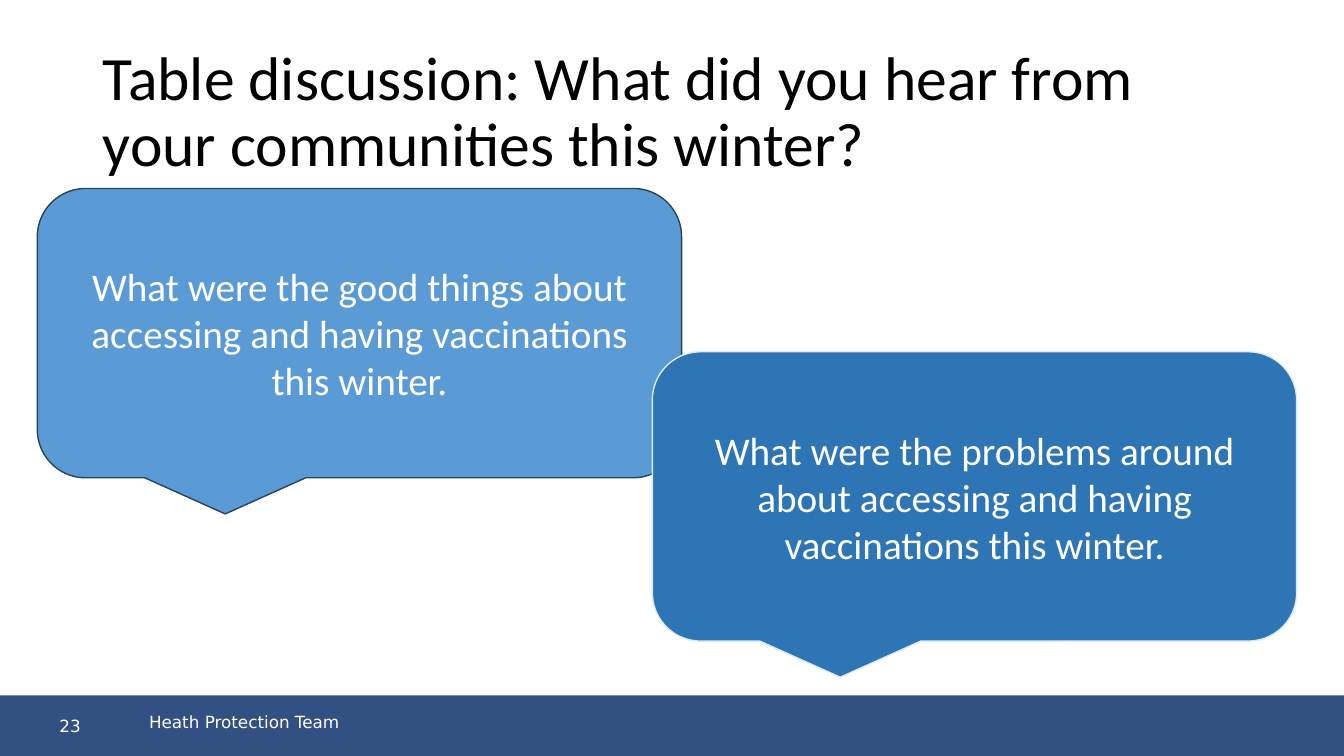
"""Build the table discussion slide."""
from pptx import Presentation
from pptx import util as u
from pptx.dml.color import RGBColor
from pptx.enum import shapes, text

PX = 9144
BLACK = RGBColor(0x00, 0x00, 0x00)
WHITE = RGBColor(0xFF, 0xFF, 0xFF)
SKY = RGBColor(0x5B, 0x9B, 0xD5)
DEEP = RGBColor(0x28, 0x44, 0x5D)
BLUE = RGBColor(0x2E, 0x75, 0xB6)
PALE = RGBColor(0xDE, 0xEB, 0xF7)
NAVY = RGBColor(0x33, 0x50, 0x83)

HEAD = {"name": "Calibri", "size": u.Pt(44)}
TALK = {"name": "Calibri", "size": u.Pt(28)}
NOTE = {"name": "DejaVu Sans", "size": u.Pt(12)}
LEFT, MID = text.PP_ALIGN.LEFT, text.PP_ALIGN.CENTER
TOP, CORE = text.MSO_ANCHOR.TOP, text.MSO_ANCHOR.MIDDLE


def scale(box):
    """Turn a box in px into EMU."""
    return [n * PX for n in box]


def write(shape, words, font, color, align=LEFT, anchor=CORE, **frame):
    """Fill a shape with one formatted paragraph."""
    body = shape.text_frame
    body.text = words
    form = {"word_wrap": True, "auto_size": text.MSO_AUTO_SIZE.NONE,
            "vertical_anchor": anchor, **frame}
    for key, val in form.items():
        setattr(body, key, val)
    para = body.paragraphs[0]
    para.alignment = align
    for key, val in font.items():
        setattr(para.runs[0].font, key, val)
    para.runs[0].font.color.rgb = color
    return para


def title(slide, box, words):
    """Place and format the title."""
    head = slide.shapes.title
    head.left, head.top, head.width, head.height = scale(box)
    write(head, words, HEAD, BLACK).line_spacing = 0.9


def block(slide, kind, box, fill, line=None):
    """Add a flat shape with an optional outline."""
    shape = slide.shapes.add_shape(kind, *scale(box))
    shape.shadow.inherit = False
    shape.fill.solid()
    shape.fill.fore_color.rgb = fill
    if line is None:
        shape.line.fill.background()
    else:
        shape.line.color.rgb = line
        shape.line.width = u.Pt(1)
    return shape


def bubble(slide, box, words, fill, line):
    """Add a speech bubble holding a question."""
    kind = shapes.MSO_SHAPE.ROUNDED_RECTANGULAR_CALLOUT
    write(block(slide, kind, box, fill, line), words, TALK, WHITE, MID)


def footer(slide, box, number, team):
    """Add the bottom band with page number and team name."""
    x, y, wide, high = box
    band = block(slide, shapes.MSO_SHAPE.RECTANGLE, box, NAVY)
    write(band, number, NOTE, WHITE, margin_left=59 * PX,
          margin_top=0, margin_bottom=0)
    label = slide.shapes.add_textbox(
        *scale((x + 138, y + 11, wide - 216, high - 11)))
    write(label, team, NOTE, WHITE, anchor=TOP)


def main():
    """Compose and save the slide."""
    deck = Presentation()
    deck.slide_width, deck.slide_height = scale((1333, 750))
    slide = deck.slides.add_slide(deck.slide_layouts[5])
    title(slide, (92, 40, 1150, 145),
          "Table discussion: What did you hear from your communities this winter?")
    bubble(slide, (37, 187, 639, 287),
           "What were the good things about accessing and having "
           "vaccinations this winter.", SKY, DEEP)
    bubble(slide, (647, 349, 639, 287),
           "What were the problems around about accessing and having "
           "vaccinations this winter.", BLUE, PALE)
    footer(slide, (0, 690, 1333, 60), "23", "Heath Protection Team")
    deck.save("out.pptx")


if __name__ == "__main__":
    main()
